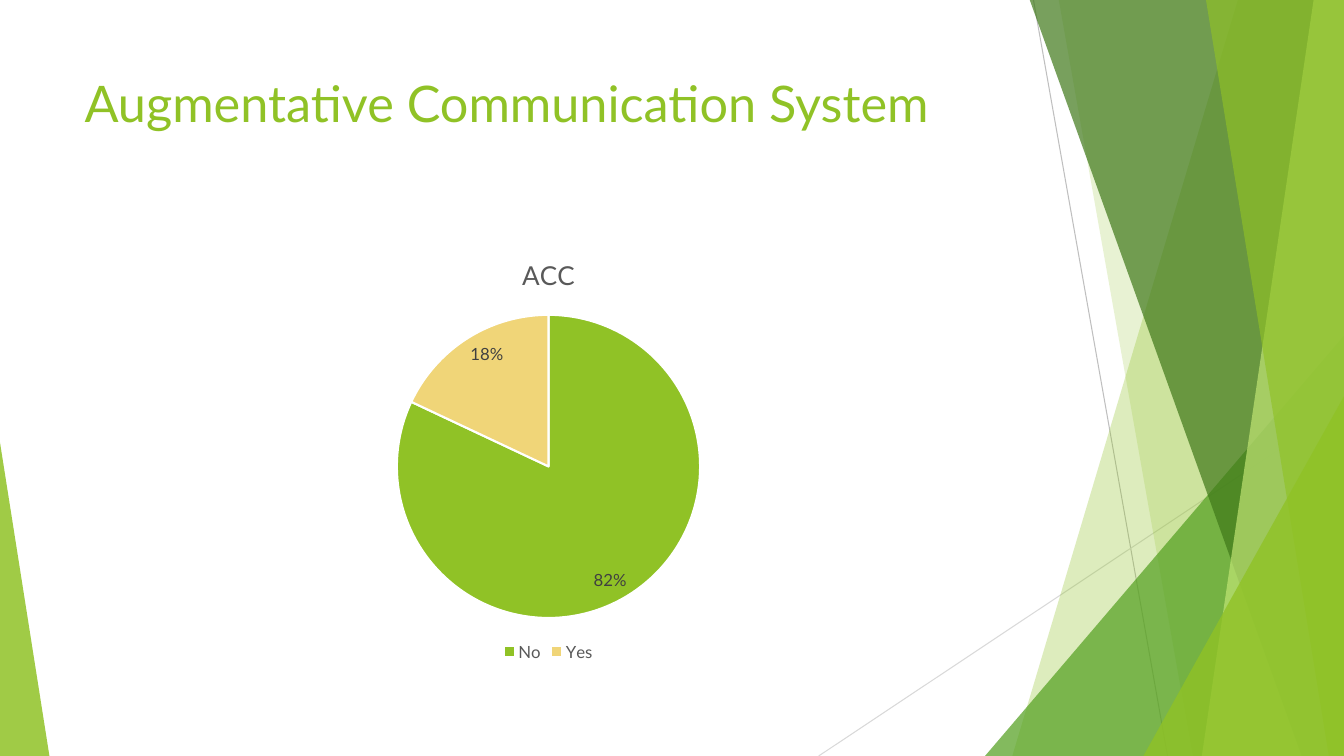
from lxml.etree import SubElement
from pptx import Presentation
from pptx.chart.data import CategoryChartData
from pptx.dml.color import RGBColor
from pptx.enum.chart import XL_CHART_TYPE, XL_LABEL_POSITION, XL_LEGEND_POSITION
from pptx.enum.shapes import MSO_CONNECTOR, MSO_SHAPE
from pptx.enum.text import MSO_ANCHOR
from pptx.oxml.ns import qn
from pptx.util import Pt

PX = 9144
WIDTH, HEIGHT = 1333, 750
FONT = "Lato"
GREEN = "90C226"


def px(*lengths):
    """Turn px lengths into EMU."""
    return [length * PX for length in lengths]


def color(hex_string):
    """Turn a hex string into a colour."""
    return RGBColor.from_string(hex_string)


def style_font(font, size, hex_string):
    """Set the typeface, size and colour of a font."""
    font.name = FONT
    font.size = Pt(size)
    font.bold = False
    font.color.rgb = color(hex_string)


def paint(shape, hex_string, opacity):
    """Give a shape a translucent fill without line or shadow."""
    shape.shadow.inherit = False
    shape.line.fill.background()
    shape.fill.solid()
    shape.fill.fore_color.rgb = color(hex_string)
    tint = shape.fill._xPr.find(".//" + qn("a:srgbClr"))
    SubElement(tint, qn("a:alpha")).set("val", str(opacity * 1000))


def add_hairline(page, start, end, hex_string):
    """Draw a thin straight line."""
    line = page.shapes.add_connector(MSO_CONNECTOR.STRAIGHT, *px(*start, *end))
    line.line.color.rgb = color(hex_string)
    line.line.width = Pt(0.75)
    SubElement(line._element.spPr, qn("a:effectLst"))


def add_band(page, box, top_left, bottom_left, hex_string, opacity):
    """Draw a band from a slanted left edge to the right side of the box."""
    left, top, width, height = box
    right, bottom = left + width, top + height
    outline = page.shapes.build_freeform(left + top_left, top, scale=PX)
    outline.add_line_segments(
        [(right, top), (right, bottom), (left + bottom_left, bottom)], close=True)
    paint(outline.convert_to_shape(), hex_string, opacity)


def add_wedge(page, box, apex, hex_string, opacity):
    """Draw a triangle whose apex sits at a share of its width."""
    wedge = page.shapes.add_shape(MSO_SHAPE.ISOSCELES_TRIANGLE, *px(*box))
    wedge.adjustments[0] = apex
    paint(wedge, hex_string, opacity)


def add_backdrop(page, box):
    """Layer the translucent facets along both sides of the box."""
    left, top, width, height = box
    right, bottom = left + width, top + height

    def band(top_left, bottom_left, hex_string, opacity):
        add_band(page, (left, top - 1, width, height + 1),
                 top_left, bottom_left, hex_string, opacity)

    def corner(wide, high, hex_string, opacity):
        add_wedge(page, (right - wide, bottom - high, wide, high),
                  1, hex_string, opacity)

    add_hairline(page, (left + 1025, top), (left + 1158, bottom), "BFBFBF")
    add_hairline(page, (right, top + 403), (left + 812, bottom), "D9D9D9")
    band(1228, 1004, GREEN, 30)
    band(1050, 1183, GREEN, 20)
    corner(356, 417, "54A021", 72)
    band(1021, 1291, "3F7819", 70)
    band(1303, 1192, "C0E474", 70)
    band(1196, 1318, GREEN, 65)
    corner(199, 357, GREEN, 80)
    add_wedge(page, (left, bottom - 311, 49, 311), 0, GREEN, 85)


def add_title(page, box, text):
    """Write the slide title at the top of the box."""
    frame = page.shapes.add_textbox(*px(*box)).text_frame
    frame.word_wrap = True
    frame.vertical_anchor = MSO_ANCHOR.TOP
    frame.text = text
    style_font(frame.paragraphs[0].runs[0].font, 36, GREEN)


def place_plot(chart, **shares):
    """Fix the plot area by shares of the chart size."""
    plot_area = chart._chartSpace.find(".//" + qn("c:plotArea"))
    layout = plot_area.find(qn("c:layout"))
    if layout is None:
        layout = SubElement(plot_area, qn("c:layout"))
        plot_area.insert(0, layout)
    manual = SubElement(layout, qn("c:manualLayout"))
    settings = {"layoutTarget": "inner", "xMode": "edge", "yMode": "edge", **shares}
    for tag, value in settings.items():
        SubElement(manual, qn("c:" + tag)).set("val", str(value))


def add_pie(page, box, name, slices):
    """Draw a pie chart with percent labels and a legend below."""
    data = CategoryChartData()
    data.categories = [label for label, _, _ in slices]
    data.add_series(name, [value for _, value, _ in slices])
    chart = page.shapes.add_chart(XL_CHART_TYPE.PIE, *px(*box), data).chart
    style_font(chart.font, 10, "000000")

    chart.has_title = True
    chart.chart_title.include_in_layout = False
    frame = chart.chart_title.text_frame
    frame.text = name
    style_font(frame.paragraphs[0].runs[0].font, 18.6, "595959")

    chart.has_legend = True
    chart.legend.position = XL_LEGEND_POSITION.BOTTOM
    chart.legend.include_in_layout = False
    style_font(chart.legend.font, 12, "595959")

    plot = chart.plots[0]
    plot.vary_by_categories = True
    for index, (_, _, hex_string) in enumerate(slices):
        wedge = plot.series[0].points[index].format
        wedge.fill.solid()
        wedge.fill.fore_color.rgb = color(hex_string)
        wedge.line.color.rgb = color("FFFFFF")
        wedge.line.width = Pt(1.5)

    labels = plot.series[0].data_labels
    labels.show_percentage = True
    labels.show_value = False
    labels.number_format = "0%"
    labels.number_format_is_linked = False
    labels.position = XL_LABEL_POSITION.INSIDE_END
    style_font(labels.font, 12, "404040")
    place_plot(chart, x=0.34, y=0.18, w=0.32, h=0.71)


def main():
    """Build the deck and save it."""
    deck = Presentation()
    deck.slide_width, deck.slide_height = px(WIDTH, HEIGHT)
    page = deck.slides.add_slide(deck.slide_layouts[6])
    add_backdrop(page, (0, 0, WIDTH, HEIGHT))
    add_title(page, (74, 67, 940, 144), "Augmentative Communication System")
    add_pie(page, (74, 236, 940, 424), "ACC",
            [("No", 82, GREEN), ("Yes", 18, "F0D578")])
    deck.save("out.pptx")


if __name__ == "__main__":
    main()
